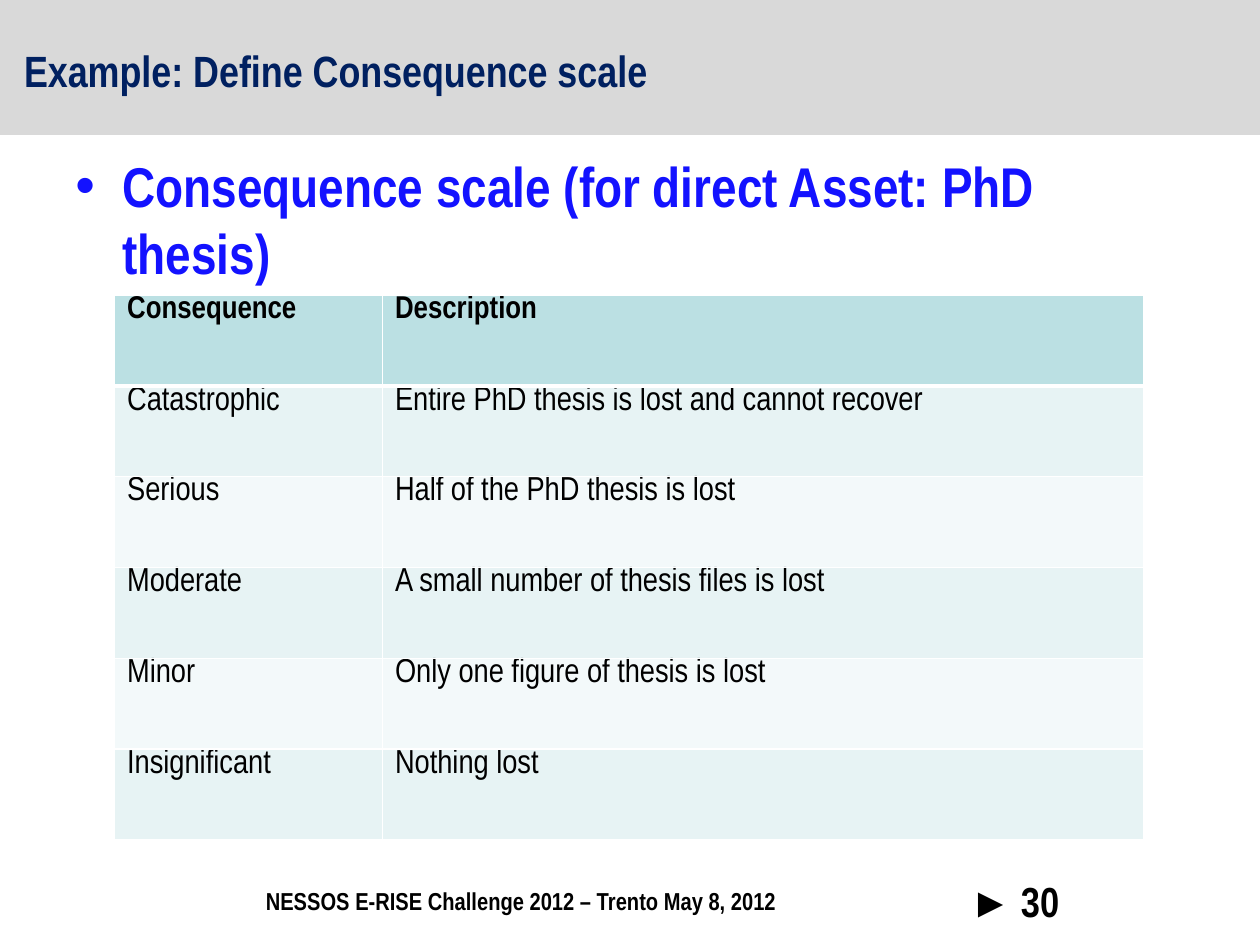
from lxml.etree import SubElement
from pptx import Presentation
from pptx.dml.color import RGBColor
from pptx.enum.shapes import MSO_SHAPE
from pptx.enum.text import MSO_ANCHOR, PP_ALIGN
from pptx.oxml.ns import qn
from pptx.util import Cm, Pt

COLORS = {
    "band": "D9D9D9", "title": "002060", "bullet": "1312FF", "text": "000000",
    "header": "BBE0E3", "odd": "E7F3F4", "even": "F3F9FA", "border": "FFFFFF",
}
FONT = "Arial Narrow"
TITLE = "Example: Define Consequence scale"
BULLET = "Consequence scale (for direct Asset: PhD thesis)"
FOOTER = "NESSOS E-RISE Challenge 2012 – Trento May 8, 2012"
PAGE_NUMBER = "► 30"
SCALE = [
    ("Consequence", "Description"),
    ("Catastrophic", "Entire PhD thesis is lost and cannot recover"),
    ("Serious", "Half of the PhD thesis is lost"),
    ("Moderate", "A small number of thesis files is lost"),
    ("Minor", "Only one figure of thesis is lost"),
    ("Insignificant", "Nothing lost"),
]
COLUMN_WIDTHS = (5.4, 15.34)
ROW_HEIGHT = 1.83


def write(frame, text, size, color="text", bold=True, bullet=False, anchor=MSO_ANCHOR.TOP):
    """Put one formatted paragraph into a text frame."""
    frame.word_wrap = True
    frame.vertical_anchor = anchor
    para = frame.paragraphs[0]
    para.alignment = PP_ALIGN.LEFT
    if bullet:
        properties = para._p.get_or_add_pPr()
        properties.set("marL", str(Cm(0.95)))
        properties.set("indent", str(-Cm(0.95)))
        SubElement(properties, qn("a:buFont"), typeface="Arial")
        SubElement(properties, qn("a:buChar"), char="•")
    span = para.add_run()
    span.text = text
    span.font.name = FONT
    span.font.size = Pt(size)
    span.font.bold = bold
    span.font.color.rgb = RGBColor.from_string(COLORS[color])


def place(shape, left, top, width, height):
    """Move and size a shape in centimetres."""
    shape.left, shape.top = Cm(left), Cm(top)
    shape.width, shape.height = Cm(width), Cm(height)


def add_text(slide, position, text, size, **style):
    """Add a text box with one paragraph."""
    box = slide.shapes.add_textbox(*map(Cm, position))
    write(box.text_frame, text, size, **style)


def add_borders(cell, bottom):
    """Draw white borders around a cell."""
    properties = cell._tc.get_or_add_tcPr()
    for index, (side, width) in enumerate((("L", 1), ("R", 1), ("T", 1), ("B", bottom))):
        line = properties.makeelement(qn(f"a:ln{side}"), {"w": str(Pt(width))})
        fill = SubElement(line, qn("a:solidFill"))
        SubElement(fill, qn("a:srgbClr"), val=COLORS["border"])
        properties.insert(index, line)


def add_scale(slide):
    """Add the table of consequences."""
    width, height = sum(COLUMN_WIDTHS), ROW_HEIGHT * len(SCALE)
    table = slide.shapes.add_table(
        len(SCALE), len(COLUMN_WIDTHS), Cm(2.31), Cm(5.95), Cm(width), Cm(height)
    ).table
    for column, column_width in zip(table.columns, COLUMN_WIDTHS):
        column.width = Cm(column_width)
    for row_index, values in enumerate(SCALE):
        table.rows[row_index].height = Cm(ROW_HEIGHT)
        header = row_index == 0
        fill = "header" if header else ("even", "odd")[row_index % 2]
        for column_index, value in enumerate(values):
            cell = table.cell(row_index, column_index)
            cell.margin_top = Cm(0)
            cell.fill.solid()
            cell.fill.fore_color.rgb = RGBColor.from_string(COLORS[fill])
            add_borders(cell, bottom=3 if header else 1)
            write(cell.text_frame, value, 18 if header else 19, bold=header)


def main():
    """Build the slide and save the deck."""
    deck = Presentation()
    deck.slide_width, deck.slide_height = Cm(25.4), Cm(19.05)
    slide = deck.slides.add_slide(deck.slide_layouts[5])

    band = slide.shapes.add_shape(MSO_SHAPE.RECTANGLE, 0, 0, deck.slide_width, Cm(2.72))
    band.shadow.inherit = False
    band.fill.solid()
    band.fill.fore_color.rgb = RGBColor.from_string(COLORS["band"])
    band.line.fill.background()
    title = slide.shapes.title
    band._element.addnext(title._element)
    place(title, 0.23, 0.53, 22.86, 1.75)
    write(title.text_frame, TITLE, 25, color="title", anchor=MSO_ANCHOR.MIDDLE)

    add_text(slide, (1.27, 2.92, 22.86, 14.1), BULLET, 32, color="bullet", bullet=True)
    add_text(slide, (5.11, 17.73, 12.4, 0.86), FOOTER, 14)
    add_text(slide, (19.3, 17.53, 5.28, 1.52), PAGE_NUMBER, 24)
    add_scale(slide)
    deck.save("out.pptx")


if __name__ == "__main__":
    main()
